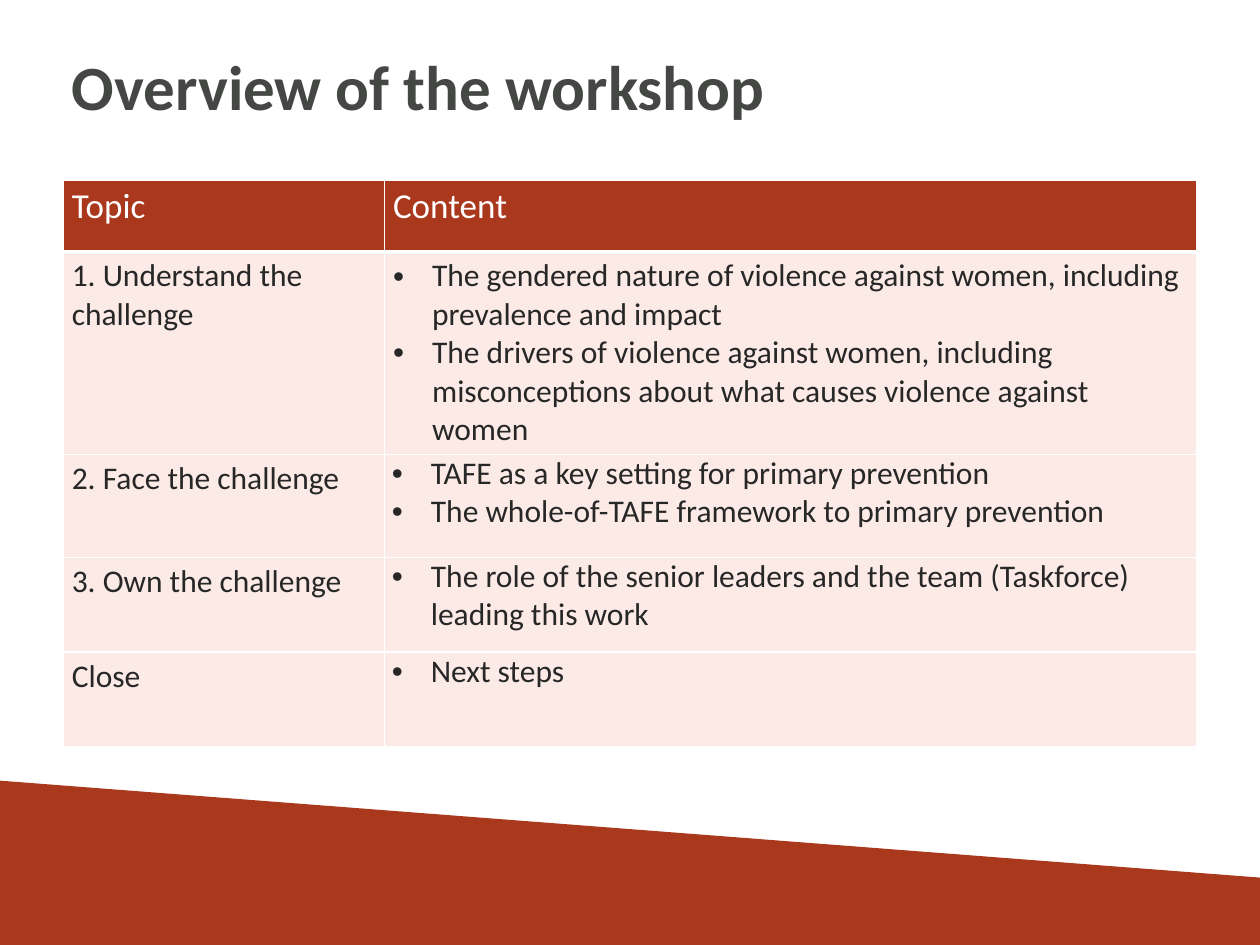
import pptx
import pptx.util
import pptx.dml.color
import pptx.enum.shapes
import pptx.enum.text
import pptx.oxml.ns
from lxml import etree

Inches = pptx.util.Inches
Pt = pptx.util.Pt
RUST, PINK, WHITE, DARK, GREY = "AA381D", "FBEAE6", "FFFFFF", "272727", "454745"
WIDE = (0.07, 0.04)
TIGHT = (0.06, 0)
COLS = (2.55, 6.45)
TALL = (0.57, 1.42, 0.82, 0.75, 0.75)
ROWS = [
    ("1. Understand the challenge", WIDE, [
        "The gendered nature of violence against women, including prevalence and impact",
        "The drivers of violence against women, including misconceptions about "
        "what causes violence against women"]),
    ("2. Face the challenge", TIGHT, [
        "TAFE as a key setting for primary prevention",
        "The whole-of-TAFE framework to primary prevention"]),
    ("3. Own the challenge", TIGHT, [
        "The role of the senior leaders and the team (Taskforce) leading this work"]),
    ("Close", TIGHT, ["Next steps"]),
]


def shade(code):
    return pptx.dml.color.RGBColor.from_string(code)


def paint(fill, code):
    fill.solid()
    fill.fore_color.rgb = shade(code)


def apply(thing, form):
    for name, value in form.items():
        setattr(thing, name, value)


def add(node, tag, **attrs):
    child = etree.SubElement(node, pptx.oxml.ns.qn(tag))
    for name, value in attrs.items():
        child.set(name, str(value))
    return child


class Deck:
    font = "Calibri"

    def __init__(self):
        self.prs = pptx.Presentation()
        apply(self.prs, {"slide_width": Inches(10), "slide_height": Inches(7.5)})
        self.slide = self.prs.slides.add_slide(self.prs.slide_layouts[5])

    def style(self, para, size, code, bold=False):
        apply(para.font, {"name": self.font, "size": Pt(size), "bold": bold})
        para.font.color.rgb = shade(code)

    def band(self, x, y, w, h, turn):
        box = self.slide.shapes.add_shape(
            pptx.enum.shapes.MSO_SHAPE.RECTANGLE, *map(Inches, (x, y, w, h)))
        box.rotation = turn
        box.shadow.inherit = False
        paint(box.fill, RUST)
        box.line.fill.background()

    def title(self, text, x, y, w, h):
        box = self.slide.shapes.title
        apply(box, dict(zip(("left", "top", "width", "height"), map(Inches, (x, y, w, h)))))
        frame = box.text_frame
        apply(frame, {"text": text, "word_wrap": True,
                      "margin_left": Inches(0.07), "margin_top": Inches(0.08),
                      "vertical_anchor": pptx.enum.text.MSO_ANCHOR.TOP})
        para = frame.paragraphs[0]
        para.alignment = pptx.enum.text.PP_ALIGN.LEFT
        self.style(para, 36, GREY, True)

    def grid(self, x, y):
        size = map(Inches, (x, y, sum(COLS), sum(TALL)))
        table = self.slide.shapes.add_table(len(TALL), len(COLS), *size).table
        table.horz_banding = False
        for col, width in zip(table.columns, COLS):
            col.width = Inches(width)
        for row, height in zip(table.rows, TALL):
            row.height = Inches(height)
        return table

    def cell(self, cell, lines, fill, code, size, pad=WIDE, dots=False, base=1):
        side, top = map(Inches, pad)
        apply(cell, {"margin_left": side, "margin_right": side,
                     "margin_top": top, "margin_bottom": top})
        self.edge(cell, base)
        paint(cell.fill, fill)
        cell.text = "\n".join(lines)
        for para in cell.text_frame.paragraphs:
            if dots:
                self.dot(para)
            self.style(para, size, code)

    def edge(self, cell, base):
        props = cell._tc.get_or_add_tcPr()
        for tag, width in (("a:lnL", 1), ("a:lnR", 1), ("a:lnT", 1), ("a:lnB", base)):
            line = add(props, tag, w=Pt(width))
            add(add(line, "a:solidFill"), "a:srgbClr", val=WHITE)

    def dot(self, para):
        props = para._p.get_or_add_pPr()
        props.set("marL", str(Inches(0.31)))
        props.set("indent", str(-Inches(0.31)))
        add(props, "a:buFont", typeface="Arial")
        add(props, "a:buChar", char="•")


def main():
    deck = Deck()
    deck.band(-0.27, 6.58, 10.47, 1.33, 4.4)
    deck.title("Overview of the workshop", 0.5, 0.3, 9, 0.87)
    table = deck.grid(0.5, 1.43)
    for col, head in enumerate(("Topic", "Content")):
        deck.cell(table.cell(0, col), [head], RUST, WHITE, 20, base=3)
    for row, (topic, pad, points) in enumerate(ROWS, 1):
        deck.cell(table.cell(row, 0), [topic], PINK, DARK, 18)
        deck.cell(table.cell(row, 1), points, PINK, DARK, 18, pad, True)
    deck.prs.save("out.pptx")


if __name__ == "__main__":
    main()
